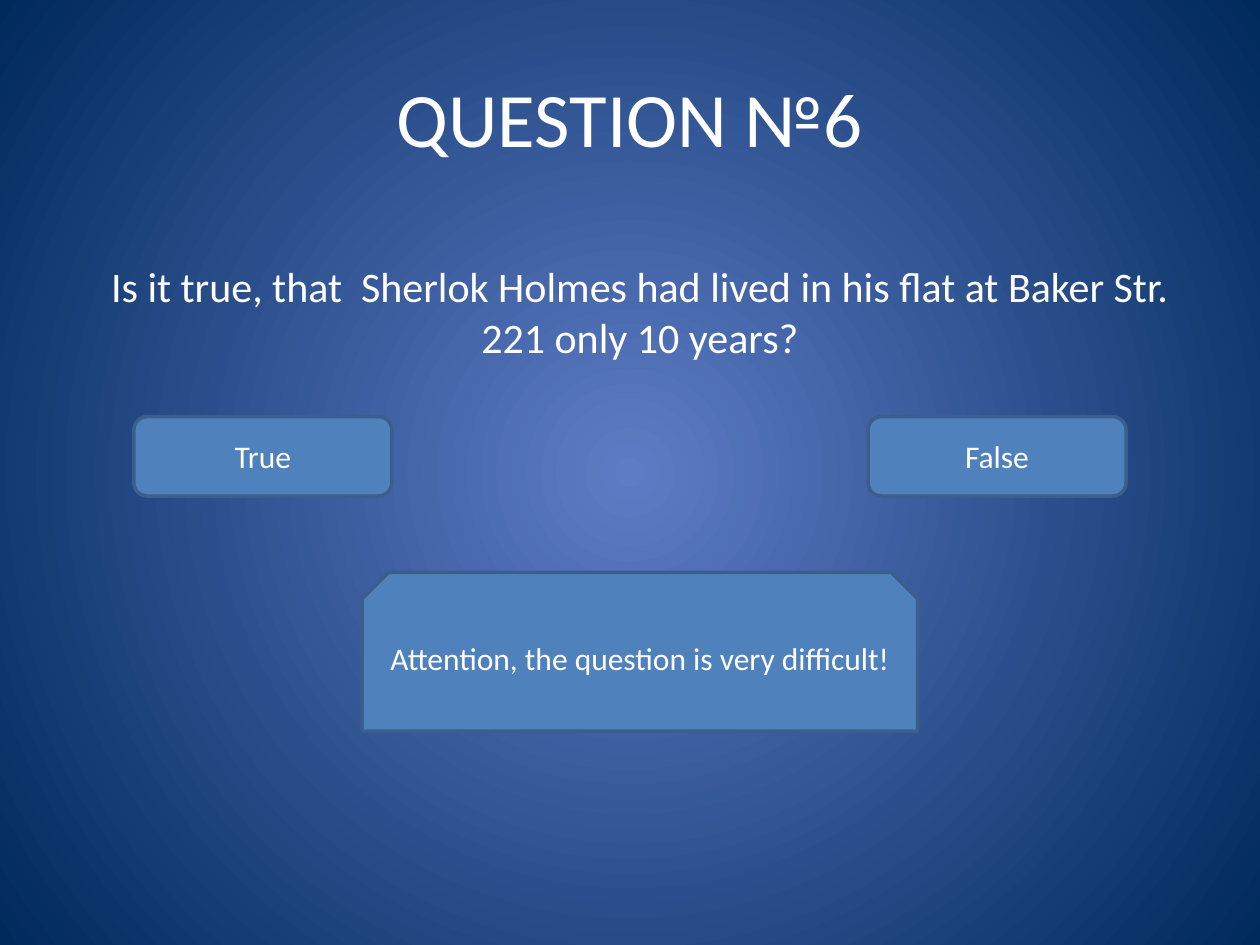
import pptx
import pptx.util
import pptx.dml.color
import pptx.enum.shapes
import pptx.enum.text
import pptx.oxml
import pptx.oxml.ns

Cm, Pt = pptx.util.Cm, pptx.util.Pt
RGB = pptx.dml.color.RGBColor
SHAPE = pptx.enum.shapes.MSO_SHAPE
ANCHOR = pptx.enum.text.MSO_ANCHOR

WHITE = RGB(0xFF, 0xFF, 0xFF)
BLUE = RGB(0x4F, 0x81, 0xBD)
EDGE = RGB(0x3A, 0x5F, 0x8C)
GLOW = RGB(0x5E, 0x7C, 0xC5)
NAVY = RGB(0x00, 0x29, 0x5C)

WIDTH, HEIGHT = 25.4, 19.05
TITLE = "QUESTION №6"
QUESTION = "Is it true, that  Sherlok Holmes had lived in his flat at Baker Str. 221 only 10 years?"
ANSWERS = ["True", "False"]
WARNING = "Attention, the question is very difficult!"
ANSWER_W, ANSWER_H, ANSWER_TOP, ANSWER_MARGIN = 5.2, 1.6, 8.4, 2.7


def write(sp, text, size, anchor):
    tf = sp.text_frame
    tf.word_wrap = True
    tf.vertical_anchor = anchor
    p = tf.paragraphs[0]
    p.alignment = pptx.enum.text.PP_ALIGN.CENTER
    r = p.add_run()
    r.text = text
    r.font.name = "Calibri"
    r.font.size = Pt(size)
    r.font.color.rgb = WHITE


def add_text(s, box, text, size, anchor):
    sp = s.shapes.add_textbox(*map(Cm, box))
    write(sp, text, size, anchor)


def add_panel(s, kind, box, text):
    sp = s.shapes.add_shape(kind, *map(Cm, box))
    sp.shadow.inherit = False
    sp.fill.solid()
    sp.fill.fore_color.rgb = BLUE
    sp.line.color.rgb = EDGE
    sp.line.width = Pt(2)
    write(sp, text, 18, ANCHOR.MIDDLE)


def paint_background(s):
    fill = s.background.fill
    fill.gradient()
    for stop, color in zip(fill.gradient_stops, (GLOW, NAVY)):
        stop.color.rgb = color
    qn = pptx.oxml.ns.qn
    grad = next(s.element.iter(qn("a:gradFill")))
    radial = pptx.oxml.parse_xml(
        f'<a:path {pptx.oxml.ns.nsdecls("a")} path="circle">'
        '<a:fillToRect l="50000" t="50000" r="50000" b="50000"/></a:path>')
    grad.replace(grad.find(qn("a:lin")), radial)


def main():
    prs = pptx.Presentation()
    prs.slide_width, prs.slide_height = Cm(WIDTH), Cm(HEIGHT)
    s = prs.slides.add_slide(prs.slide_layouts[6])
    paint_background(s)
    add_text(s, (1.27, 0.76, 22.86, 3.18), TITLE, 44, ANCHOR.MIDDLE)
    add_text(s, (1.9, 5.13, 22, 2.31), QUESTION, 24, ANCHOR.TOP)
    step = WIDTH - 2 * ANSWER_MARGIN - ANSWER_W
    for i, answer in enumerate(ANSWERS):
        box = (ANSWER_MARGIN + i * step, ANSWER_TOP, ANSWER_W, ANSWER_H)
        add_panel(s, SHAPE.ROUNDED_RECTANGLE, box, answer)
    add_panel(s, SHAPE.SNIP_2_SAME_RECTANGLE, (7.3, 11.54, 11.2, 3.2), WARNING)
    prs.save("out.pptx")


if __name__ == "__main__":
    main()
